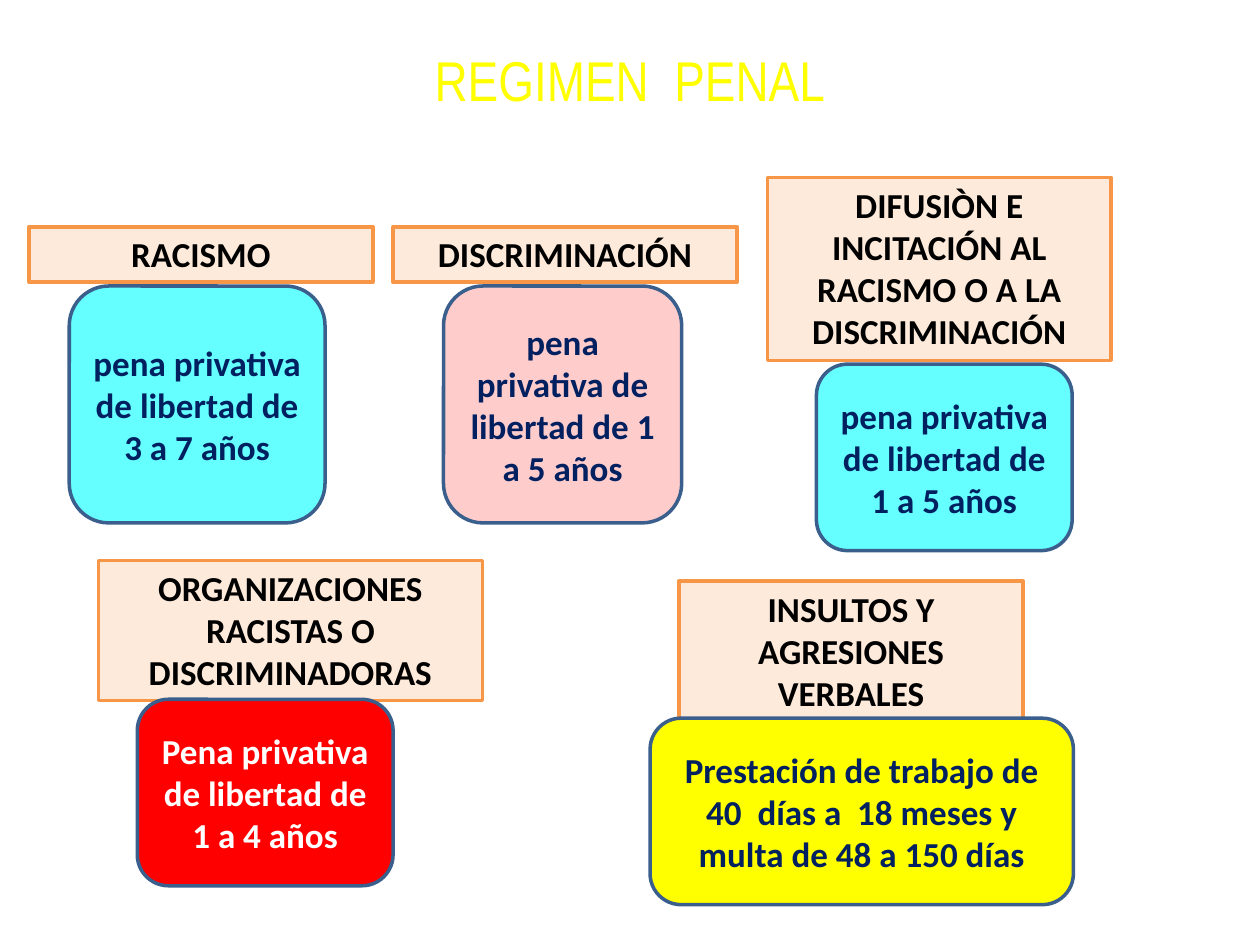
from pptx import Presentation
from pptx.dml.color import RGBColor
from pptx.enum.shapes import MSO_SHAPE as Shape
from pptx.enum.text import MSO_ANCHOR as Anchor, MSO_AUTO_SIZE as AutoSize, PP_ALIGN as Align
from pptx.util import Inches, Pt

COLORS = {
    "title": "FFFF00", "offence": "FDEADA", "offence_edge": "F79646",
    "penalty_edge": "3A5F8C", "black": "000000", "navy": "002060",
    "white": "FFFFFF", "cyan": "66FFFF", "pink": "FFCCCC",
    "red": "FF0000", "yellow": "FFFF00",
}
TITLE_FONT = {"name": "Arial Narrow", "size": Pt(32), "bold": False}
BODY_FONT = {"name": "Calibri", "size": Pt(20), "bold": True}

# Offence, its box, penalty, its box, penalty fill, penalty text colour
CASES = [
    ("RACISMO", (0.23, 1.8, 2.73, 0.44),
     "pena privativa de libertad de 3 a 7 años", (0.55, 2.27, 2.03, 1.88), "cyan", "navy"),
    ("DIFUSIÒN E INCITACIÓN AL RACISMO O A LA DISCRIMINACIÓN", (6.09, 1.41, 2.73, 1.45),
     "pena privativa de libertad de 1 a 5 años", (6.48, 2.89, 2.03, 1.48), "cyan", "navy"),
    ("ORGANIZACIONES RACISTAS O DISCRIMINADORAS", (0.78, 4.45, 3.05, 1.11),
     "Pena privativa de libertad de 1 a 4 años", (1.09, 5.55, 2.03, 1.48), "red", "white"),
    ("INSULTOS Y AGRESIONES VERBALES", (5.39, 4.61, 2.73, 1.11),
     "Prestación de trabajo de 40  días a  18 meses y multa de 48 a 150 días",
     (5.16, 5.7, 3.36, 1.48), "yellow", "navy"),
    ("DISCRIMINACIÓN", (3.12, 1.8, 2.73, 0.44),
     "pena privativa de libertad de 1 a 5 años", (3.52, 2.27, 1.89, 1.88), "pink", "navy"),
]


def rgb(color):
    return RGBColor.from_string(COLORS[color])


def write(frame, text, font, color, **layout):
    for setting, value in layout.items():
        setattr(frame, setting, value)
    line = frame.paragraphs[0]
    line.alignment = Align.CENTER
    run = line.add_run()
    run.text = text
    for setting, value in font.items():
        setattr(run.font, setting, value)
    run.font.color.rgb = rgb(color)


def add_title(slide, box, text):
    title = slide.shapes.add_textbox(*map(Inches, box))
    write(title.text_frame, text, TITLE_FONT, "title", word_wrap=False)


def add_panel(slide, kind, box, fill, edge):
    panel = slide.shapes.add_shape(kind, *map(Inches, box))
    panel.shadow.inherit = False
    panel.fill.solid()
    panel.fill.fore_color.rgb = rgb(fill)
    panel.line.color.rgb = rgb(edge)
    panel.line.width = Pt(2)
    return panel.text_frame


def add_offence(slide, box, text):
    frame = add_panel(slide, Shape.RECTANGLE, box, "offence", "offence_edge")
    write(frame, text, BODY_FONT, "black", word_wrap=True,
          vertical_anchor=Anchor.TOP, auto_size=AutoSize.SHAPE_TO_FIT_TEXT)


def add_penalty(slide, box, text, fill, color):
    frame = add_panel(slide, Shape.ROUNDED_RECTANGLE, box, fill, "penalty_edge")
    write(frame, text, BODY_FONT, color, word_wrap=True, vertical_anchor=Anchor.MIDDLE)


def main():
    deck = Presentation()
    deck.slide_width, deck.slide_height = Inches(10), Inches(7.5)
    slide = deck.slides.add_slide(deck.slide_layouts[6])

    add_title(slide, (2.89, 0.31, 4.22, 1.02), "REGIMEN  PENAL")

    # Each penalty overlaps the foot of its offence
    for offence, offence_box, penalty, penalty_box, fill, color in CASES:
        add_offence(slide, offence_box, offence)
        add_penalty(slide, penalty_box, penalty, fill, color)

    deck.save("out.pptx")


if __name__ == "__main__":
    main()
